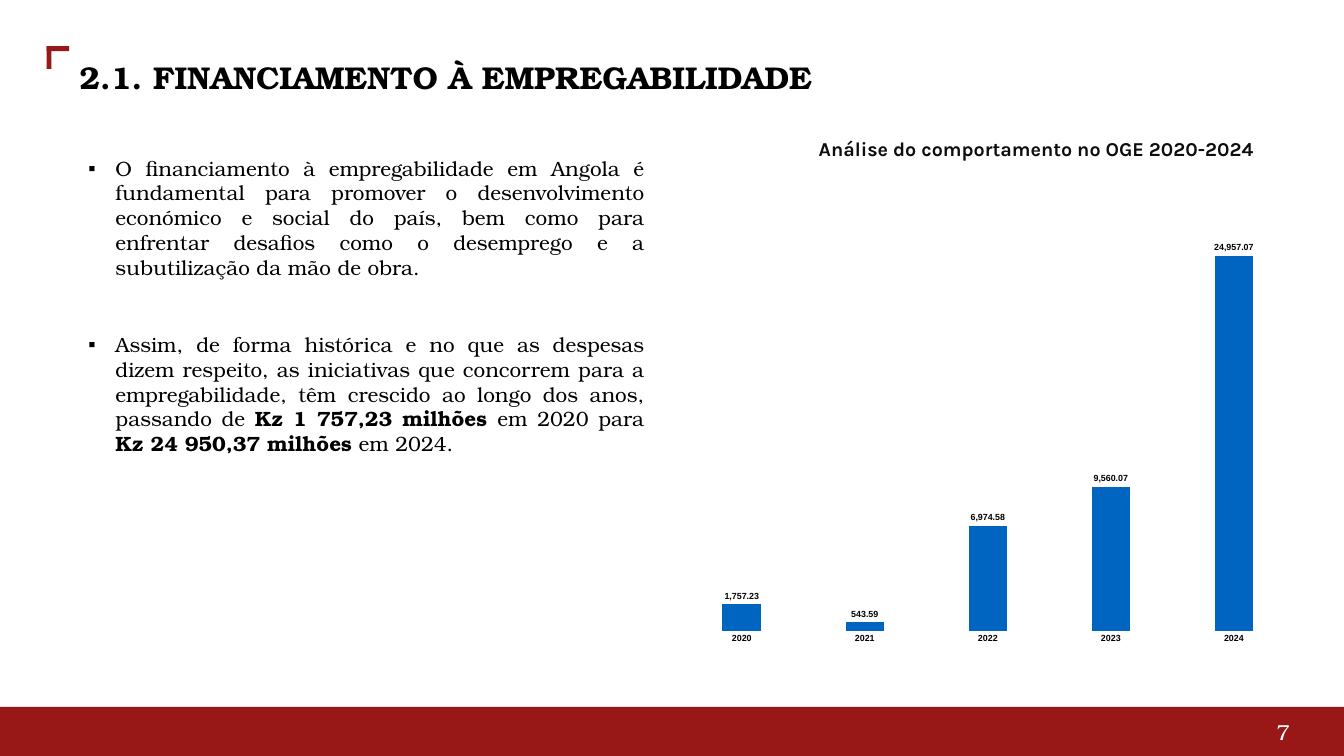
from lxml.etree import SubElement
from pptx import Presentation
from pptx.chart.data import CategoryChartData
from pptx.dml.color import RGBColor
from pptx.enum.chart import XL_CHART_TYPE, XL_LABEL_POSITION, XL_TICK_MARK
from pptx.enum.shapes import MSO_SHAPE
from pptx.enum.text import MSO_ANCHOR, MSO_AUTO_SIZE, PP_ALIGN
from pptx.oxml.ns import qn
from pptx.util import Pt

SERIF = "TeX Gyre Bonum"
RED = "971817"
POINTS = [
    [("O financiamento à empregabilidade em Angola é fundamental para promover o "
      "desenvolvimento económico e social do país, bem como para enfrentar desafios "
      "como o desemprego e a subutilização da mão de obra.", False)],
    [("Assim, de forma histórica e no que as despesas dizem respeito, as iniciativas "
      "que concorrem para a empregabilidade, têm crescido ao longo dos anos, "
      "passando de ", False),
     ("Kz 1 757,23 milhões ", True), ("em 2020 para ", False),
     ("Kz 24 950,37 milhões", True), (" em 2024.", False)],
]
SPEND = {"2020": 1757.23, "2021": 543.59, "2022": 6974.58,
         "2023": 9560.07, "2024": 24957.07}


def paint(part, color):
    part.solid()
    part.fore_color.rgb = RGBColor.from_string(color)


def style(font, name, size, color="000000", bold=None):
    font.name = name
    font.size = Pt(size)
    font.bold = bold
    paint(font.fill, color)


def set_frame(frame, margin):
    frame.word_wrap = True
    frame.auto_size = MSO_AUTO_SIZE.NONE
    frame.margin_left = frame.margin_right = Pt(margin)
    frame.margin_top = frame.margin_bottom = Pt(margin)


def add_bar(slide, *box):
    bar = slide.shapes.add_shape(MSO_SHAPE.RECTANGLE, *map(Pt, box))
    bar.shadow.inherit = False
    paint(bar.fill, RED)
    bar.line.fill.background()
    return bar


def add_footer(slide, width, number):
    frame = add_bar(slide, 0, 718, width, 50).text_frame
    set_frame(frame, 0)
    frame.margin_right = Pt(55)
    frame.vertical_anchor = MSO_ANCHOR.MIDDLE
    line = frame.paragraphs[0]
    line.text = number
    line.alignment = PP_ALIGN.RIGHT
    style(line.font, SERIF, 22, "FFFFFF")


def set_title(slide, text):
    title = slide.shapes.title
    title.left, title.top, title.width, title.height = map(Pt, (75.6, 53.3, 1248, 50))
    frame = title.text_frame
    set_frame(frame, 5)
    frame.vertical_anchor = MSO_ANCHOR.MIDDLE
    line = frame.paragraphs[0]
    line.text = text
    line.alignment = PP_ALIGN.LEFT
    style(line.font, SERIF, 32, bold=True)


def add_bullets(slide, points):
    frame = slide.shapes.add_textbox(Pt(89.3), Pt(158), Pt(565), Pt(330)).text_frame
    set_frame(frame, 0)
    for index, runs in enumerate(points):
        line = frame.add_paragraph() if index else frame.paragraphs[0]
        line.alignment = PP_ALIGN.JUSTIFY
        line.space_before = Pt(53 if index else 1)
        props = line._p.get_or_add_pPr()
        props.set("marL", str(Pt(28)))
        props.set("indent", str(-Pt(27.4)))
        SubElement(props, qn("a:buFont"), typeface="Arial")
        SubElement(props, qn("a:buChar"), char="▪")
        style(line.font, SERIF, 21)
        for text, bold in runs:
            run = line.add_run()
            run.text = text
            run.font.bold = bold


def add_caption(slide, text):
    frame = slide.shapes.add_textbox(Pt(824.4), Pt(134), Pt(500), Pt(32)).text_frame
    set_frame(frame, 0)
    frame.margin_left = Pt(7.2)
    frame.margin_top = Pt(3.6)
    line = frame.paragraphs[0]
    line.text = text
    line.line_spacing = 1.07
    style(line.font, "Karla", 20, "0D0D0D", True)


def place_plot(chart, **spots):
    area = chart._chartSpace.chart.plotArea
    layout = area.find(qn("c:layout"))
    if layout is None:
        layout = SubElement(area, qn("c:layout"))
        area.insert(0, layout)
    manual = SubElement(layout, qn("c:manualLayout"))
    modes = {"layoutTarget": "inner", "xMode": "edge", "yMode": "edge"}
    for key, value in {**modes, **spots}.items():
        SubElement(manual, qn(f"c:{key}"), val=str(value))


def add_columns(slide, values):
    data = CategoryChartData()
    data.categories = list(values)
    data.add_series("OGE", list(values.values()))
    chart = slide.shapes.add_chart(XL_CHART_TYPE.COLUMN_CLUSTERED, Pt(671),
                                   Pt(144.7), Pt(664.6), Pt(545), data).chart
    chart.has_title = chart.has_legend = False
    style(chart.font, "Arial", 9, bold=True)
    place_plot(chart, x=0.03, y=0.07, w=0.94, h=0.84)

    years = chart.category_axis
    years.major_tick_mark = XL_TICK_MARK.NONE
    paint(years.format.line.fill, "FFFFFF")
    scale = chart.value_axis
    scale.minimum_scale, scale.maximum_scale = 0, 30000
    scale.has_major_gridlines = False
    scale.visible = False

    plot = chart.plots[0]
    plot.gap_width, plot.overlap = 219, -27
    plot.vary_by_categories = False
    paint(plot.series[0].format.fill, "0065C1")
    plot.has_data_labels = True
    labels = plot.data_labels
    labels.show_value = True
    labels.position = XL_LABEL_POSITION.OUTSIDE_END
    labels.number_format = "#,##0.00"
    labels.number_format_is_linked = False
    style(labels.font, "Arial", 9, bold=True)


def main():
    deck = Presentation()
    deck.slide_width, deck.slide_height = Pt(1365), Pt(768)
    slide = deck.slides.add_slide(deck.slide_layouts[5])
    add_footer(slide, 1365, "7")
    set_title(slide, "2.1. FINANCIAMENTO À EMPREGABILIDADE")
    add_bar(slide, 47.3, 47, 5, 23)
    add_bar(slide, 47.3, 47, 23, 5)
    add_bullets(slide, POINTS)
    add_columns(slide, SPEND)
    add_caption(slide, "Análise do comportamento no OGE 2020-2024")
    deck.save("out.pptx")


if __name__ == "__main__":
    main()
